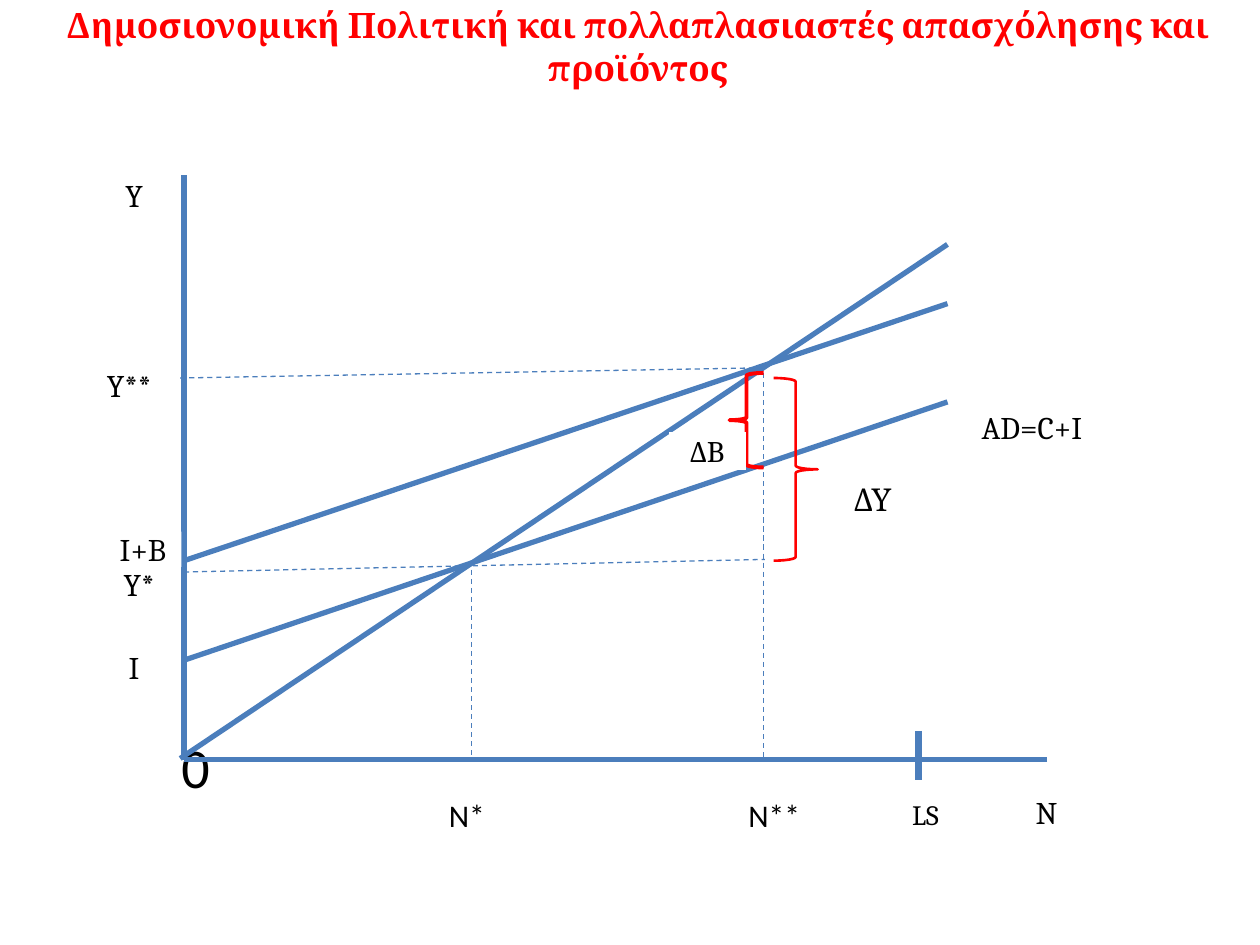
from dataclasses import dataclass

from lxml import etree
from pptx import Presentation
from pptx.dml.color import RGBColor
from pptx.enum import dml, shapes, text
from pptx.oxml import ns
from pptx import util as u

PX = 9144
BLUE, RED, BLACK, WHITE = "4B7EBC", "FF0000", "000000", "FFFFFF"
SHAPE = shapes.MSO_SHAPE


@dataclass
class Line:
    x1: int
    y1: int
    x2: int
    y2: int
    width: float = 3
    dashed: bool = False


@dataclass
class Brace:
    kind: SHAPE
    x: int
    y: int
    w: int
    h: int
    width: float


@dataclass
class Label:
    text: str
    x: int
    y: int
    w: int
    h: int
    size: int = 18
    font: str = "Cambria"


AXES_AND_CURVES = [
    Line(146, 139, 146, 603),
    Line(831, 603, 146, 603),
    Line(752, 194, 143, 602),
    Line(752, 319, 146, 524),
    Line(752, 241, 146, 445),
    Line(729, 580, 729, 619, 4.5),
]
GUIDES = [
    Line(374, 445, 374, 602, 0.75, True),
    Line(606, 296, 606, 602, 0.75, True),
    Line(146, 454, 607, 444, 0.75, True),
    Line(143, 300, 602, 292, 0.75, True),
]
BRACES = [
    Brace(SHAPE.RIGHT_BRACE, 614, 300, 35, 145, 1.5),
    Brace(SHAPE.LEFT_BRACE, 579, 296, 27, 75, 2.25),
]
LABELS = [
    Label("I", 75, 517, 63, 24),
    Label("I+B", 83, 422, 61, 28),
    Label("Y", 75, 139, 63, 31),
    Label("N*", 343, 627, 55, 39, font="Calibri"),
    Label("N**", 579, 627, 71, 39, font="Calibri"),
    Label("Y*", 83, 449, 55, 28),
    Label("Y**", 67, 292, 71, 27),
    Label("ΔΥ", 665, 371, 55, 50),
    Label("ΔΒ", 531, 343, 61, 30, 16),
    Label("AD=C+I", 760, 319, 118, 39),
    Label("LS", 693, 627, 83, 39, 16),
    Label("N", 791, 619, 79, 50),
]


def px(n: int) -> u.Emu:
    return u.Emu(n * PX)


def rgb(value: str) -> RGBColor:
    return RGBColor.from_string(value)


def place(sp, x: int, y: int, w: int, h: int) -> None:
    sp.left, sp.top, sp.width, sp.height = map(px, (x, y, w, h))


def write(p, value: str, size: int, font: str, color: str, align) -> None:
    p.text = value
    p.alignment = align
    p.font.size = u.Pt(size)
    p.font.name = font
    p.font.color.rgb = rgb(color)


def draw_line(s, line: Line) -> None:
    c = s.shapes.add_connector(
        shapes.MSO_CONNECTOR.STRAIGHT, *map(px, (line.x1, line.y1, line.x2, line.y2))
    )
    c.line.color.rgb = rgb(BLUE)
    c.line.width = u.Pt(line.width)
    if line.dashed:
        c.line.dash_style = dml.MSO_LINE.DASH
    etree.SubElement(c._element.spPr, ns.qn("a:effectLst"))


def draw_brace(s, brace: Brace) -> None:
    sp = s.shapes.add_shape(brace.kind, *map(px, (brace.x, brace.y, brace.w, brace.h)))
    sp.shadow.inherit = False
    sp.fill.background()
    sp.line.color.rgb = rgb(RED)
    sp.line.width = u.Pt(brace.width)


def draw_label(s, label: Label) -> None:
    sp = s.shapes.add_shape(
        SHAPE.RECTANGLE, *map(px, (label.x, label.y, label.w, label.h))
    )
    sp.shadow.inherit = False
    sp.fill.solid()
    sp.fill.fore_color.rgb = rgb(WHITE)
    sp.line.fill.background()
    tf = sp.text_frame
    tf.word_wrap = True
    tf.vertical_anchor = text.MSO_ANCHOR.MIDDLE
    write(tf.paragraphs[0], label.text, label.size, label.font, BLACK, text.PP_ALIGN.CENTER)


def fill_title(sp) -> None:
    place(sp, 0, 13, 1012, 47)
    tf = sp.text_frame
    tf.auto_size = text.MSO_AUTO_SIZE.NONE
    tf.vertical_anchor = text.MSO_ANCHOR.MIDDLE
    p = tf.paragraphs[0]
    heading = "Δημοσιονομική Πολιτική και πολλαπλασιαστές απασχόλησης και προϊόντος"
    write(p, heading, 20, "Cambria", RED, text.PP_ALIGN.CENTER)
    p.font.bold = True


def fill_origin(sp) -> None:
    place(sp, 35, 76, 929, 638)
    tf = sp.text_frame
    tf.auto_size = text.MSO_AUTO_SIZE.NONE
    tf.margin_left, tf.margin_top = px(109), px(505)
    p = tf.paragraphs[0]
    write(p, "0", 32, "Calibri", BLACK, text.PP_ALIGN.LEFT)
    p.space_before = u.Pt(0)
    pPr = p._p.get_or_add_pPr()
    pPr.set("marL", "0")
    pPr.set("indent", "0")
    pPr.insert_element_before(etree.Element(ns.qn("a:buNone")), "a:tabLst", "a:defRPr")


def main() -> None:
    prs = Presentation()
    prs.slide_width, prs.slide_height = px(1000), px(750)
    s = prs.slides.add_slide(prs.slide_layouts[1])
    fill_title(s.shapes.title)
    fill_origin(s.placeholders[1])
    for line in AXES_AND_CURVES + GUIDES:
        draw_line(s, line)
    for brace in BRACES:
        draw_brace(s, brace)
    for label in LABELS:
        draw_label(s, label)
    prs.save("out.pptx")


if __name__ == "__main__":
    main()
